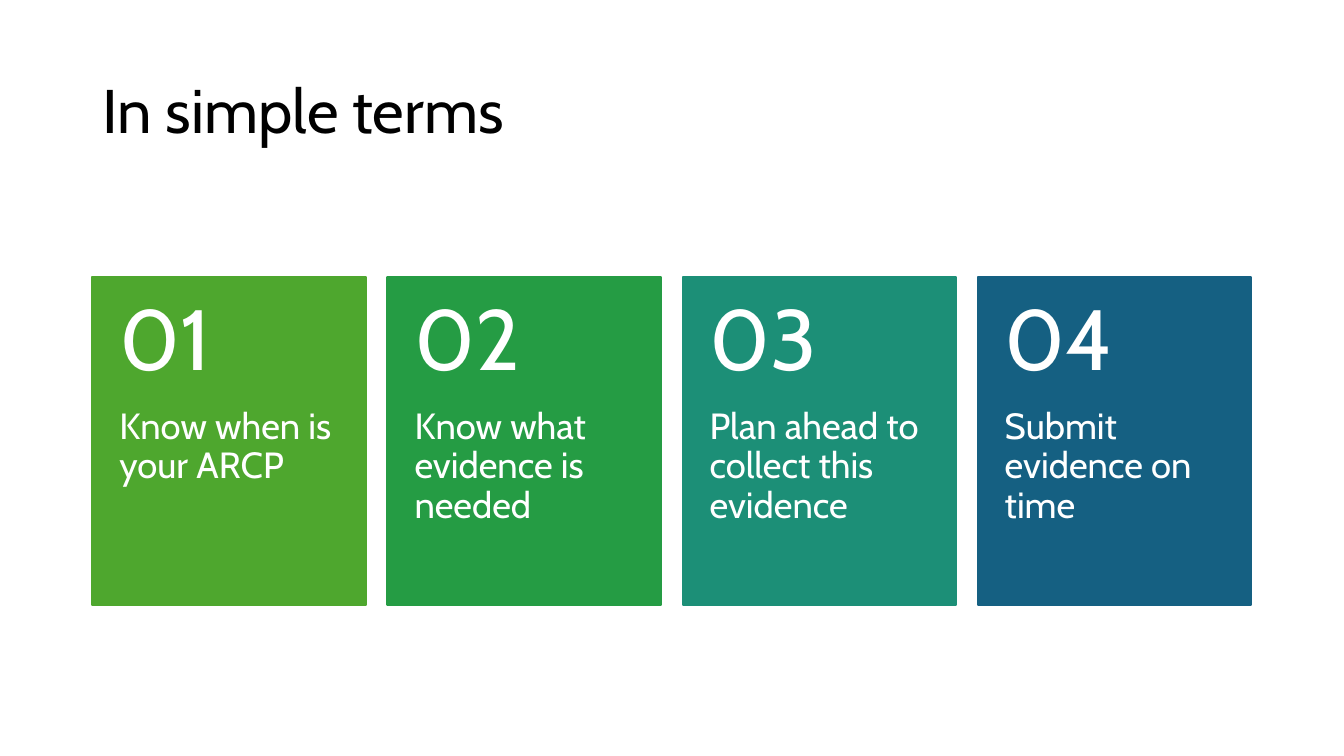
from pptx import Presentation
from pptx.dml.color import RGBColor
from pptx.enum.shapes import MSO_SHAPE
from pptx.enum.text import MSO_ANCHOR, MSO_AUTO_SIZE, PP_ALIGN
from pptx.util import Pt

FONT = "Cabin"
COLOURS = {
    "title": "000000",
    "text": "FFFFFF",
    "lime": "4EA72E",
    "green": "259C44",
    "teal": "1C8F77",
    "blue": "156082",
}
STEPS = [
    ("lime", "Know when is your ARCP"),
    ("green", "Know what evidence is needed"),
    ("teal", "Plan ahead to collect this evidence"),
    ("blue", "Submit evidence on time"),
]
LEFT, TOP, PITCH = 66, 198, 210.8
CARD_WIDTH, CARD_HEIGHT, NUMBER_HEIGHT = 195.2, 234, 93.6


def write(frame, text, size, colour, anchor):
    frame.word_wrap = True
    frame.auto_size = MSO_AUTO_SIZE.NONE
    frame.vertical_anchor = anchor
    para = frame.paragraphs[0]
    para.alignment = PP_ALIGN.LEFT
    para.line_spacing = 0.9
    span = para.add_run()
    span.text = text
    span.font.name = FONT
    span.font.size = Pt(size)
    span.font.color.rgb = RGBColor.from_string(COLOURS[colour])


def add_card_text(left, top, height, text, size, anchor, inset_top, inset_bottom):
    box = page.shapes.add_textbox(Pt(left), Pt(top), Pt(CARD_WIDTH), Pt(height))
    frame = box.text_frame
    frame.margin_left = frame.margin_right = Pt(19.3)
    frame.margin_top, frame.margin_bottom = Pt(inset_top), Pt(inset_bottom)
    write(frame, text, size, "text", anchor)


deck = Presentation()
deck.slide_width, deck.slide_height = Pt(960), Pt(540)
page = deck.slides.add_slide(deck.slide_layouts[5])

# Title
title = page.shapes.title
title.left, title.top, title.width, title.height = Pt(LEFT), Pt(28.8), Pt(828), Pt(104.4)
write(title.text_frame, "In simple terms", 44, "title", MSO_ANCHOR.MIDDLE)

# Numbered cards
for index, (colour, step) in enumerate(STEPS):
    left = LEFT + index * PITCH
    card = page.shapes.add_shape(
        MSO_SHAPE.RECTANGLE, Pt(left), Pt(TOP), Pt(CARD_WIDTH), Pt(CARD_HEIGHT))
    card.shadow.inherit = False
    card.fill.solid()
    card.fill.fore_color.rgb = RGBColor.from_string(COLOURS[colour])
    card.line.color.rgb = RGBColor.from_string(COLOURS[colour])
    card.line.width = Pt(1.5)
    add_card_text(left, TOP + NUMBER_HEIGHT, CARD_HEIGHT - NUMBER_HEIGHT,
                  step, 26, MSO_ANCHOR.TOP, 0, 26)
    add_card_text(left, TOP, NUMBER_HEIGHT,
                  f"{index + 1:02d}", 61, MSO_ANCHOR.MIDDLE, 13, 13)

deck.save("out.pptx")
